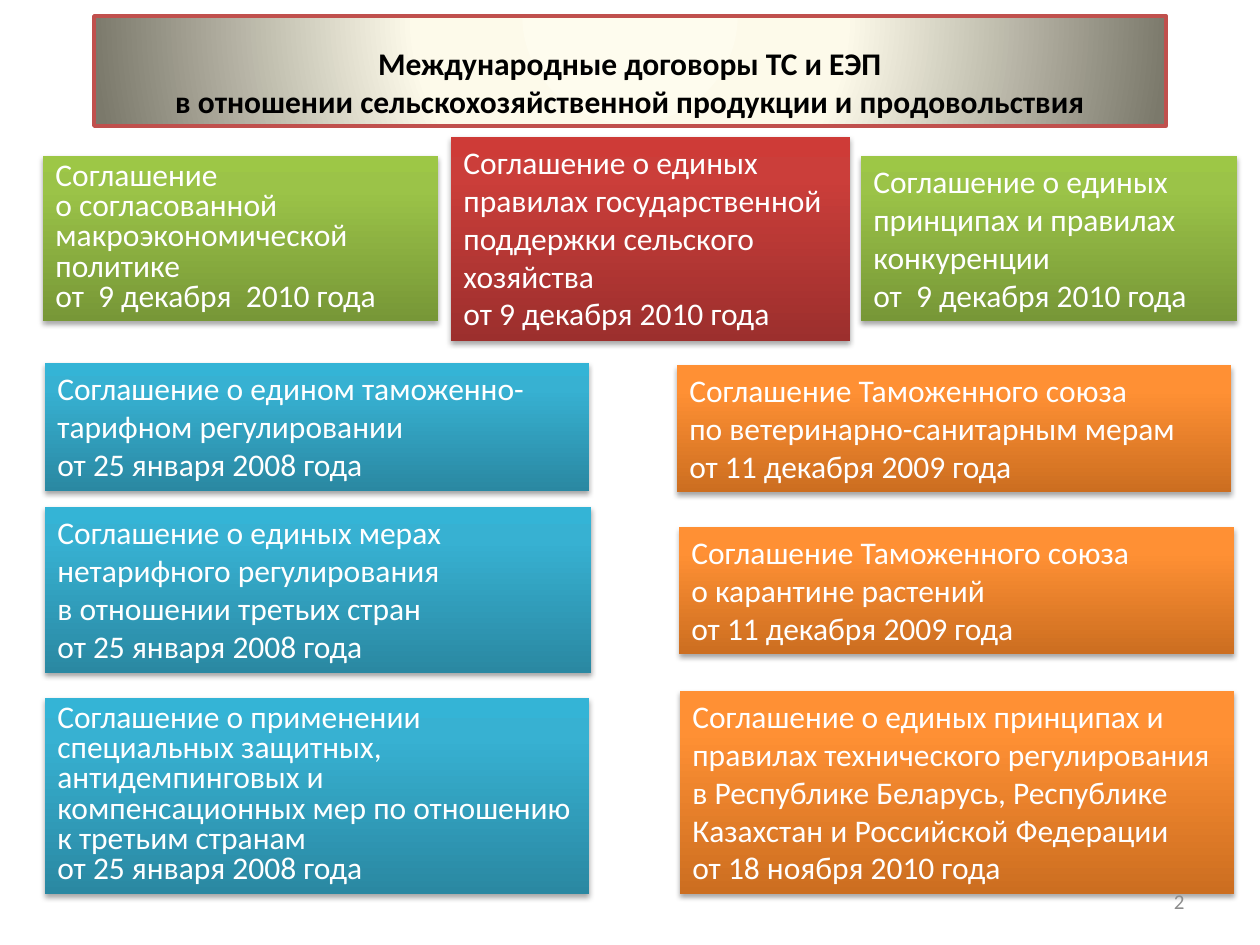
from dataclasses import dataclass

from lxml.etree import SubElement
from pptx import Presentation
from pptx.dml.color import RGBColor
from pptx.enum.shapes import MSO_SHAPE as Shape
from pptx.enum.text import MSO_ANCHOR as Anchor, MSO_AUTO_SIZE as AutoSize, PP_ALIGN as Align
from pptx.oxml.ns import qn
from pptx.util import Emu, Pt

PX = 914400 / 126
FONT = "Calibri"
BLACK = RGBColor(0x00, 0x00, 0x00)
WHITE = RGBColor(0xFF, 0xFF, 0xFF)
GRAY = RGBColor(0x8C, 0x8C, 0x8C)
BORDER = RGBColor(0xC0, 0x50, 0x4D)

# Gradient stops: (percent, colour)
Stops = tuple[tuple[int, RGBColor], ...]


def shades(low: str, middle: str, high: str, turn: int = 80) -> Stops:
    colours = (RGBColor.from_string(code) for code in (low, middle, high))
    return tuple(zip((0, turn, 100), colours))


CREAM = shades("FEFCEE", "FDFAEA", "7B796B", 40)
GREEN = shades("779737", "9BC348", "9DC746")
RED = shades("9C2F2D", "CB3E3A", "CE3B37")
BLUE = shades("2A88A2", "37B1D2", "34B4D6")
ORANGE = shades("CC6E20", "FF9034", "FF9136")


@dataclass
class Agreement:
    left: int
    top: int
    width: int
    height: int
    stops: Stops
    name: str
    date: str
    spacing: float = 1.0


AGREEMENTS = [
    # General economic policy
    Agreement(43, 156, 395, 165, GREEN,
              "Соглашение\nо согласованной макроэкономической политике",
              "от  9 декабря  2010 года", 0.8),
    Agreement(451, 137, 399, 204, RED,
              "Соглашение о единых правилах государственной поддержки сельского хозяйства",
              "от 9 декабря 2010 года"),
    Agreement(861, 156, 376, 165, GREEN,
              "Соглашение о единых принципах и правилах конкуренции",
              "от  9 декабря 2010 года"),
    # Trade measures
    Agreement(45, 363, 544, 128, BLUE,
              "Соглашение о едином таможенно-тарифном регулировании",
              "от 25 января 2008 года"),
    Agreement(45, 507, 546, 166, BLUE,
              "Соглашение о единых мерах нетарифного регулирования\vв отношении третьих стран",
              "от 25 января 2008 года"),
    Agreement(45, 698, 544, 196, BLUE,
              "Соглашение о применении специальных защитных, антидемпинговых и "
              "компенсационных мер по отношению к третьим странам",
              "от 25 января 2008 года", 0.8),
    # Technical and sanitary measures
    Agreement(677, 365, 554, 127, ORANGE,
              "Соглашение Таможенного союза\vпо ветеринарно-санитарным мерам",
              "от 11 декабря 2009 года"),
    Agreement(679, 527, 555, 127, ORANGE,
              "Соглашение Таможенного союза\vо карантине растений",
              "от 11 декабря 2009 года"),
    Agreement(680, 691, 554, 203, ORANGE,
              "Соглашение о единых принципах и правилах технического регулирования "
              "в Республике Беларусь, Республике Казахстан и Российской Федерации",
              "от 18 ноября 2010 года"),
]


def px(length: int) -> Emu:
    return Emu(round(length * PX))


def set_gradient(shape, stops: Stops, radial: bool = False) -> None:
    shape.fill.gradient()
    gradient = shape._element.spPr.find(qn("a:gradFill"))
    for child in list(gradient):
        gradient.remove(child)
    stop_list = SubElement(gradient, qn("a:gsLst"))
    for percent, colour in stops:
        stop = SubElement(stop_list, qn("a:gs"), pos=str(percent * 1000))
        SubElement(stop, qn("a:srgbClr"), val=str(colour))
    if radial:
        circle = SubElement(gradient, qn("a:path"), path="circle")
        SubElement(circle, qn("a:fillToRect"), l="50000", t="-80000", r="50000", b="180000")
    else:
        SubElement(gradient, qn("a:lin"), ang="16200000", scaled="0")


def set_shadow(shape) -> None:
    shape.shadow.inherit = False
    effects = shape._element.spPr.find(qn("a:effectLst"))
    shadow = SubElement(effects, qn("a:outerShdw"), blurRad=str(Pt(3.1)), dist=str(Pt(1.8)),
                        dir="5400000", rotWithShape="0")
    colour = SubElement(shadow, qn("a:srgbClr"), val=str(BLACK))
    SubElement(colour, qn("a:alpha"), val="35000")


def write(shape, text: str, size: int, colour: RGBColor, align: Align, anchor: Anchor,
          bold: bool = False, spacing: float = 1.0) -> None:
    frame = shape.text_frame
    frame.text = text
    frame.word_wrap = True
    frame.auto_size = AutoSize.NONE
    frame.vertical_anchor = anchor
    for para in frame.paragraphs:
        para.alignment = align
        para.line_spacing = spacing
        for span in para.runs:
            span.font.name = FONT
            span.font.size = Pt(size)
            span.font.bold = bold
            span.font.color.rgb = colour


def add_agreement(page, item: Agreement) -> None:
    box = page.shapes.add_shape(Shape.RECTANGLE, px(item.left), px(item.top),
                                px(item.width), px(item.height))
    set_gradient(box, item.stops)
    box.line.fill.background()
    set_shadow(box)
    write(box, f"{item.name}\n{item.date}", 18, WHITE, Align.LEFT, Anchor.TOP,
          spacing=item.spacing)


def main() -> None:
    deck = Presentation()
    deck.slide_width, deck.slide_height = px(1260), px(945)
    page = deck.slides.add_slide(deck.slide_layouts[5])

    # Title banner
    title = page.shapes.title
    title.left, title.top, title.width, title.height = px(94), px(16), px(1072), px(110)
    set_gradient(title, CREAM, radial=True)
    title.line.color.rgb = BORDER
    title.line.width = Pt(2)
    write(title, "Международные договоры ТС и ЕЭП\v"
          "в отношении сельскохозяйственной продукции и продовольствия",
          18, BLACK, Align.CENTER, Anchor.BOTTOM, bold=True)

    # Agreements
    for item in AGREEMENTS:
        add_agreement(page, item)

    # Page number
    number = page.shapes.add_textbox(px(903), px(876), px(294), px(50))
    write(number, "2", 12, GRAY, Align.RIGHT, Anchor.MIDDLE)

    deck.save("out.pptx")


if __name__ == "__main__":
    main()
